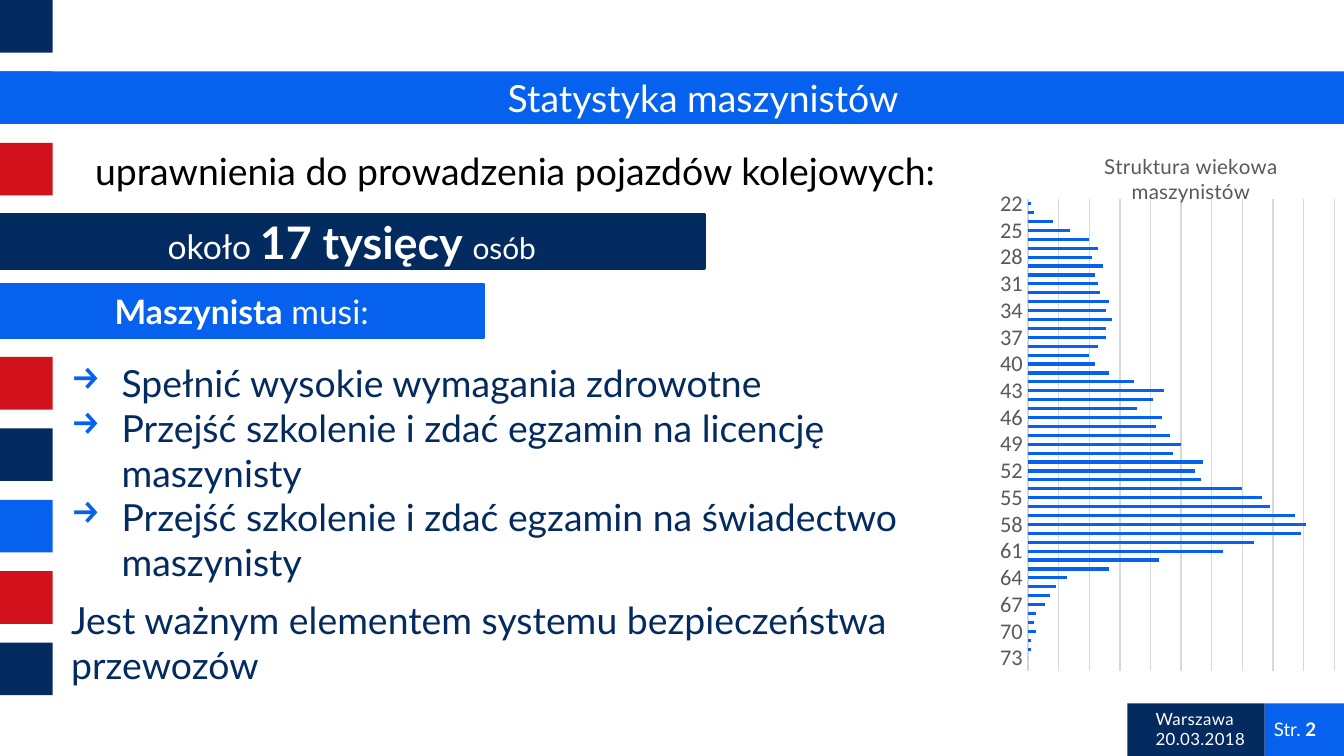
from dataclasses import dataclass
from itertools import cycle

from lxml.etree import SubElement
from pptx import Presentation
from pptx.chart.data import CategoryChartData
from pptx.dml.color import RGBColor
from pptx.enum.chart import XL_CHART_TYPE, XL_TICK_MARK
from pptx.enum.shapes import MSO_SHAPE
from pptx.enum.text import MSO_ANCHOR, PP_ALIGN
from pptx.oxml import parse_xml
from pptx.oxml.ns import nsdecls, qn
from pptx.util import Pt


@dataclass(frozen=True)
class Theme:
    navy: RGBColor = RGBColor(0x04, 0x2B, 0x60)
    blue: RGBColor = RGBColor(0x06, 0x61, 0xEE)
    red: RGBColor = RGBColor(0xD1, 0x12, 0x1C)
    white: RGBColor = RGBColor(0xFF, 0xFF, 0xFF)
    black: RGBColor = RGBColor(0, 0, 0)
    grey: RGBColor = RGBColor(0x59, 0x59, 0x59)
    grid: RGBColor = RGBColor(0xD9, 0xD9, 0xD9)
    font: str = "Lato"
    chart_font: str = "Calibri"
    body: int = 20
    banner: int = 18
    highlight: int = 24
    unit: int = 16
    page_number: int = 10
    date: int = 9
    chart: int = 10
    chart_title: int = 11
    axis: int = 12


THEME = Theme()
PAGE_WIDTH, PAGE_HEIGHT = 720, 405
SQUARE, SQUARE_STEP = 28.2, 38.25
FOOTER_TOP = PAGE_HEIGHT - SQUARE

REQUIREMENTS = [
    "Spełnić wysokie wymagania zdrowotne",
    "Przejść szkolenie i zdać egzamin na licencję maszynisty",
    "Przejść szkolenie i zdać egzamin na świadectwo maszynisty",
]
FIRST_AGE = 22
DRIVERS_BY_AGE = [
    1, 2, 9, 15, 22, 25, 23, 27, 24, 25, 26, 29, 28, 30, 28, 28, 25, 22,
    24, 29, 38, 49, 45, 39, 48, 46, 51, 55, 52, 63, 60, 62, 77, 84, 87, 96,
    100, 98, 81, 70, 47, 29, 14, 10, 8, 6, 3, 2, 3, 1, 1, 0, 0,
]


def style_font(font, size, color, bold=False, name=THEME.font):
    font.name = name
    font.size = Pt(size)
    font.color.rgb = color
    font.bold = bold


def add_block(page, left, top, width, height, color, outlined=False):
    block = page.shapes.add_shape(
        MSO_SHAPE.RECTANGLE, Pt(left), Pt(top), Pt(width), Pt(height))
    block.shadow.inherit = False
    block.fill.solid()
    block.fill.fore_color.rgb = color
    if outlined:
        block.line.color.rgb = color
        block.line.width = Pt(2)
    else:
        block.line.fill.background()
    return block


def add_spans(para, spans, color):
    """Add (text, size, bold) spans to a paragraph."""
    for text, size, bold in spans:
        span = para.add_run()
        span.text = text
        style_font(span.font, size, color, bold)


def add_banner(page, top, width, height, color, spans):
    banner = add_block(page, 0, top, width, height, color, outlined=True)
    frame = banner.text_frame
    frame.vertical_anchor = MSO_ANCHOR.MIDDLE
    para = frame.paragraphs[0]
    para.alignment = PP_ALIGN.CENTER
    add_spans(para, spans, THEME.white)


def add_text(page, left, top, width, height, paragraphs, color,
             align=PP_ALIGN.LEFT, anchor=MSO_ANCHOR.MIDDLE):
    """Add a text box whose paragraphs are lists of spans."""
    box = page.shapes.add_textbox(Pt(left), Pt(top), Pt(width), Pt(height))
    frame = box.text_frame
    frame.word_wrap = True
    frame.vertical_anchor = anchor
    for index, spans in enumerate(paragraphs):
        para = frame.add_paragraph() if index else frame.paragraphs[0]
        para.alignment = align
        add_spans(para, spans, color)
    return frame


def add_arrow_bullet(para):
    properties = para._p.get_or_add_pPr()
    properties.set("marL", str(Pt(27)))
    properties.set("indent", str(Pt(-27)))
    bullet_color = SubElement(properties, qn("a:buClr"))
    SubElement(bullet_color, qn("a:srgbClr"), val=str(THEME.blue))
    SubElement(properties, qn("a:buChar"), char="→")


def set_layout(parent, index, **fractions):
    """Place a chart part by hand, in fractions of the chart's size."""
    for old in parent.findall(qn("c:layout")):
        parent.remove(old)
    inner = '<c:layoutTarget val="inner"/>' if "w" in fractions else ""
    modes = "".join(f'<c:{key}Mode val="edge"/>' for key in ("x", "y"))
    values = "".join(f'<c:{key} val="{value}"/>' for key, value in fractions.items())
    parent.insert(index, parse_xml(
        f'<c:layout {nsdecls("c")}><c:manualLayout>'
        f'{inner}{modes}{values}</c:manualLayout></c:layout>'))


def add_age_chart(page, left, top, width, height):
    data = CategoryChartData()
    data.categories = [str(FIRST_AGE + offset) for offset in range(len(DRIVERS_BY_AGE))]
    data.add_series("Series 1", DRIVERS_BY_AGE)
    chart = page.shapes.add_chart(
        XL_CHART_TYPE.BAR_CLUSTERED, Pt(left), Pt(top), Pt(width), Pt(height), data).chart
    chart.has_legend = False
    style_font(chart.font, THEME.chart, THEME.black, name=THEME.chart_font)

    chart.has_title = True
    title = chart.chart_title
    title.text_frame.text = "Struktura wiekowa\nmaszynistów"
    for para in title.text_frame.paragraphs:
        style_font(para.runs[0].font, THEME.chart_title, THEME.grey)
    set_layout(title._element, 1, x=0.34, y=0.01)

    plot = chart.plots[0]
    plot.gap_width = 182
    plot.vary_by_categories = False
    bars = plot.series[0].format.fill
    bars.solid()
    bars.fore_color.rgb = THEME.blue
    set_layout(chart._chartSpace.chart.plotArea, 0, x=0.145, y=0.104, w=0.829, h=0.845)

    ages = chart.category_axis
    ages.reverse_order = True
    ages.major_tick_mark = XL_TICK_MARK.NONE
    style_font(ages.tick_labels.font, THEME.axis, THEME.grey, name=THEME.chart_font)
    label_skip = parse_xml(f'<c:tickLblSkip {nsdecls("c")} val="4"/>')
    ages._element.find(qn("c:noMultiLvlLbl")).addprevious(label_skip)

    counts = chart.value_axis
    counts.minimum_scale, counts.maximum_scale, counts.major_unit = 0, 110, 11
    counts.has_major_gridlines = True
    counts.visible = False
    for line in (ages.format.line, counts.major_gridlines.format.line):
        line.color.rgb = THEME.grid
        line.width = Pt(0.75)


def add_frame(page):
    """Draw the column of squares, the title band and the footer."""
    colors = cycle((THEME.navy, THEME.blue, THEME.red))
    for row, color in zip(range(10), colors):
        add_block(page, 0, row * SQUARE_STEP, SQUARE, SQUARE, color)
    add_block(page, 0, SQUARE_STEP, PAGE_WIDTH, SQUARE, THEME.blue)
    add_block(page, 677.5, FOOTER_TOP, 42.5, SQUARE, THEME.blue)
    add_block(page, 604, FOOTER_TOP, 73.5, SQUARE, THEME.navy)
    add_text(page, 675.4, 382.5, 50, 16,
             [[("Str. ", THEME.page_number, False), ("2", THEME.page_number, True)]],
             THEME.white)
    place_date = add_text(page, 612, 382.5, 65.5, 16,
                          [[(text, THEME.date, False)] for text in ("Warszawa", "20.03.2018")],
                          THEME.white)
    for para in place_date.paragraphs:
        para.runs[0].font._element.set("spc", "20")


def add_requirements(page):
    closing = "Jest ważnym elementem systemu bezpieczeństwa przewozów"
    frame = add_text(page, 31, 189.4, 502, 191.5,
                     [[(text, THEME.body, False)] for text in REQUIREMENTS + [closing]],
                     THEME.navy, anchor=MSO_ANCHOR.TOP)
    *items, last = frame.paragraphs
    for para in items:
        add_arrow_bullet(para)
    last.space_before = Pt(7)


def main():
    deck = Presentation()
    deck.slide_width, deck.slide_height = Pt(PAGE_WIDTH), Pt(PAGE_HEIGHT)
    page = deck.slides.add_slide(deck.slide_layouts[6])
    add_frame(page)
    add_text(page, 48, SQUARE_STEP, 657.5, SQUARE,
             [[("Statystyka maszynistów", THEME.body, False)]], THEME.white, PP_ALIGN.CENTER)
    add_text(page, 35.3, 75.6, 486.7, 31.5,
             [[("uprawnienia do prowadzenia pojazdów kolejowych: ", THEME.body, False)]],
             THEME.black, PP_ALIGN.CENTER, MSO_ANCHOR.TOP)
    add_requirements(page)
    add_banner(page, 115, 377, 28.8, THEME.navy,
               [("około ", THEME.banner, False), ("17 tysięcy ", THEME.highlight, True),
                ("osób", THEME.unit, False)])
    add_banner(page, 152.5, 259, SQUARE, THEME.blue,
               [("Maszynista", THEME.banner, True), (" musi:", THEME.banner, False)])
    add_age_chart(page, 522, 75.6, 198, 299.5)
    deck.save("out.pptx")


if __name__ == "__main__":
    main()
